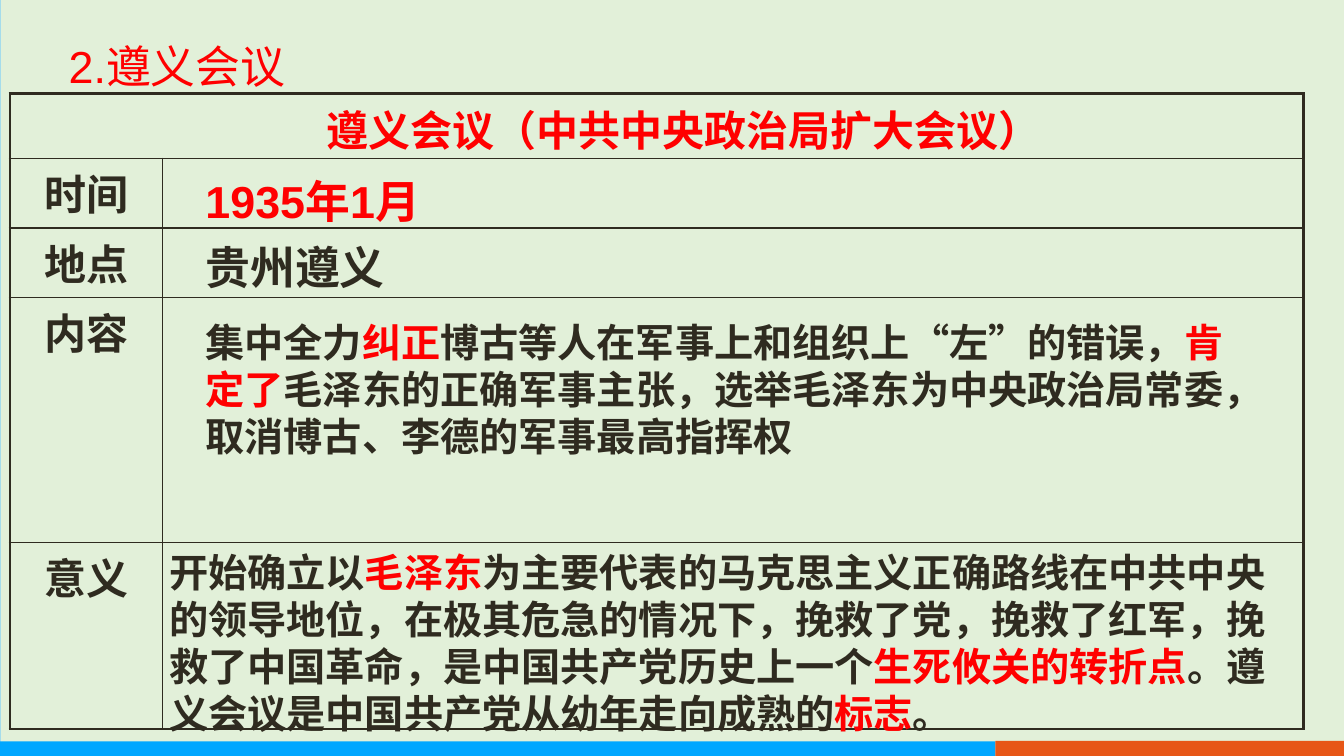
"""Build the slide on the Zunyi Conference with its summary table."""
from lxml import etree
from pptx import Presentation
from pptx.dml.color import RGBColor
from pptx.enum import lang, shapes, text
from pptx.oxml import ns
from pptx.util import Pt

SKY = RGBColor(0x9D, 0xDA, 0xEE)
PALE_GREEN = RGBColor(0xE2, 0xF0, 0xD9)
BLUE = RGBColor(0x00, 0xA7, 0xFF)
ORANGE = RGBColor(0xE7, 0x56, 0x17)
INK = RGBColor(0x2F, 0x2B, 0x20)
RED = RGBColor(0xFF, 0x00, 0x00)
HAN_FONT = "Noto Sans CJK SC"


def write(frame, runs, size, latin=HAN_FONT, bold=True, align=text.PP_ALIGN.LEFT):
    frame.word_wrap = True
    line = frame.paragraphs[0]
    line.alignment = align
    line.line_spacing = Pt(size * 1.2)
    line.space_before = Pt(0)
    for words, color in runs:
        run = line.add_run()
        run.text = words
        font = run.font
        font.size = Pt(size)
        font.bold = bold
        font.color.rgb = color
        font.name = latin
        font.language_id = lang.MSO_LANGUAGE_ID.SIMPLIFIED_CHINESE
        etree.SubElement(font._element, ns.qn("a:ea"), typeface=HAN_FONT)


def set_borders(cell, widths):
    cell.fill.background()
    properties = cell._tc.get_or_add_tcPr()
    for position, (side, width) in enumerate(zip("LRTB", widths)):
        border = etree.Element(ns.qn(f"a:ln{side}"), w=str(Pt(width)))
        fill = etree.SubElement(border, ns.qn("a:solidFill"))
        etree.SubElement(fill, ns.qn("a:srgbClr"), val=str(INK))
        properties.insert(position, border)


deck = Presentation()
deck.slide_width, deck.slide_height = Pt(960), Pt(540)
slide = deck.slides.add_slide(deck.slide_layouts[5])
slide.background.fill.solid()
slide.background.fill.fore_color.rgb = SKY

bands = [
    (0.7, 0, 959.3, 540, PALE_GREEN),
    (0, 529.6, 711, 10.4, BLUE),
    (711, 529.2, 249, 10.8, ORANGE),
]
for left, top, width, height, color in bands:
    band = slide.shapes.add_shape(
        shapes.MSO_SHAPE.RECTANGLE, Pt(left), Pt(top), Pt(width), Pt(height))
    band.shadow.inherit = False
    band.fill.solid()
    band.fill.fore_color.rgb = color
    band.line.fill.background()

title = slide.shapes.title
slide.shapes._spTree.append(title._element)
title.left, title.top, title.width, title.height = Pt(41.8), Pt(20.9), Pt(226.8), Pt(45.4)
title.text_frame.vertical_anchor = text.MSO_ANCHOR.TOP
title.text_frame.auto_size = text.MSO_AUTO_SIZE.NONE
title.text_frame.margin_top = Pt(6.8)
write(title.text_frame, [("2.遵义会议", RED)], 32, "Arial", False)

labels = ["遵义会议（中共中央政治局扩大会议）", "时间", "地点", "内容", "意义"]
row_heights = [46.1, 49.7, 49.7, 175, 133.2]
column_widths = [108.7, 815]
summary = slide.shapes.add_table(
    len(row_heights), len(column_widths), Pt(7.2), Pt(67),
    Pt(sum(column_widths)), Pt(sum(row_heights))).table
summary.first_row = summary.horz_banding = False
for column, width in zip(summary.columns, column_widths):
    column.width = Pt(width)
summary.cell(0, 0).merge(summary.cell(0, 1))

last_row = len(labels) - 1
for index, (label, height) in enumerate(zip(labels, row_heights)):
    summary.rows[index].height = Pt(height)
    top = 2.25 if index == 0 else 1
    bottom = 2.25 if index == last_row else 1
    inner = 2.25 if index == 0 else 1
    set_borders(summary.cell(index, 0), (2.25, inner, top, bottom))
    set_borders(summary.cell(index, 1), (inner, 2.25, top, bottom))
    heading = summary.cell(index, 0)
    heading.margin_left = Pt(48 if index == 0 else 9.4)
    heading.margin_right = Pt(9.4)
    heading.margin_top, heading.margin_bottom = Pt(10), Pt(0)
    write(heading.text_frame, [(label, RED if index == 0 else INK)], 30,
          align=text.PP_ALIGN.CENTER)

entries = [
    (139.7, 117.4, 263.5, 45.4, 32, "Arial", [("1935年1月", RED)]),
    (139.7, 164.2, 246.2, 45.4, 32, "Arial", [("贵州遵义", INK)]),
    (139.7, 221, 756, 108.7, 28, HAN_FONT, [
        ("集中全力", INK),
        ("纠正", RED),
        ("博古等人在军事上和组织上“左”的错误，", INK),
        ("肯定了", RED),
        ("毛泽东的正确军事主张，选举毛泽东为中央政治局常委，"
         "取消博古、李德的军事最高指挥权", INK),
    ]),
    (113.8, 385.2, 807.8, 143.3, 28, HAN_FONT, [
        ("开始确立以", INK),
        ("毛泽东", RED),
        ("为主要代表的马克思主义正确路线在中共中央的领导地位，在极其危急的情况下，"
         "挽救了党，挽救了红军，挽救了中国革命，是中国共产党历史上一个", INK),
        ("生死攸关的转折点", RED),
        ("。遵义会议是中国共产党从幼年走向成熟的", INK),
        ("标志", RED),
        ("。", INK),
    ]),
]
for left, top, width, height, size, latin, runs in entries:
    entry = slide.shapes.add_textbox(Pt(left), Pt(top), Pt(width), Pt(height)).text_frame
    entry.margin_top = Pt(3.6 + size / 10)
    write(entry, runs, size, latin)

deck.save("out.pptx")
